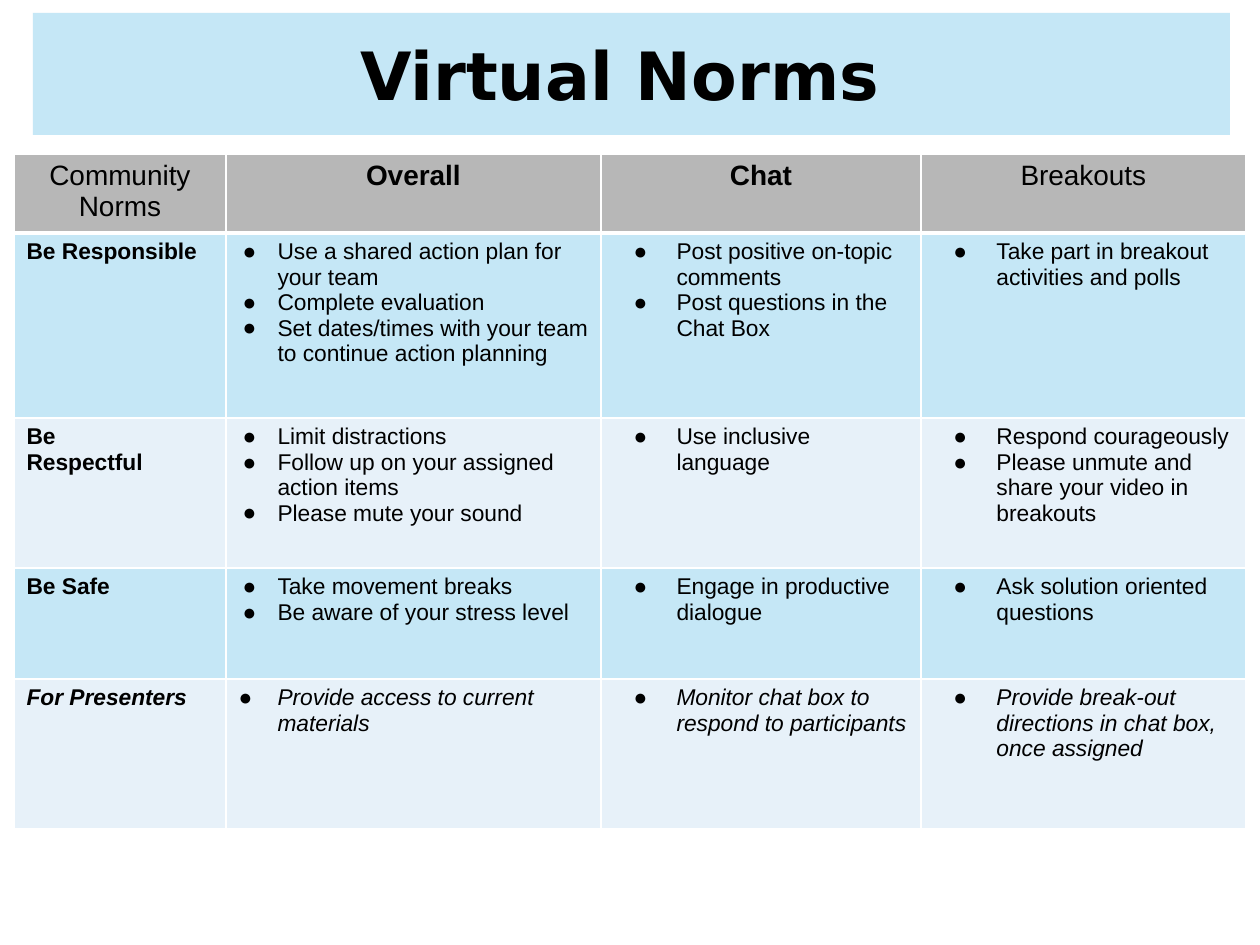
from lxml.etree import SubElement
from pptx import Presentation
from pptx.dml.color import RGBColor
from pptx.enum.text import MSO_ANCHOR, MSO_AUTO_SIZE, PP_ALIGN
from pptx.oxml.ns import qn
from pptx.util import Pt

PX = 914400 / 126
COLORS = {"sky": "A9DCF2", "pale": "E7F1F9", "gray": "B7B7B7",
          "black": "000000", "white": "FFFFFF"}


def paint(shape, name):
    shape.fill.solid()
    shape.fill.fore_color.rgb = RGBColor.from_string(COLORS[name])
    if name == "sky":
        color = shape.fill._xPr.find(qn("a:solidFill"))[0]
        SubElement(color, qn("a:alpha"), val="67000")


def style(font, **form):
    font.color.rgb = RGBColor.from_string(COLORS["black"])
    for key, value in form.items():
        setattr(font, key, value)


deck = Presentation()
deck.slide_width, deck.slide_height = round(1260 * PX), round(945 * PX)
slide = deck.slides.add_slide(deck.slide_layouts[5])

# Title band; the trailing space shifts the centred text
title = slide.shapes.title
box = {"left": 33, "top": 13, "width": 1197, "height": 122}
for key, value in box.items():
    setattr(title, key, round(value * PX))
paint(title, "sky")
frame = title.text_frame
frame.text = "Virtual Norms "
frame.auto_size = MSO_AUTO_SIZE.NONE
frame.vertical_anchor = MSO_ANCHOR.MIDDLE
frame.paragraphs[0].alignment = PP_ALIGN.CENTER
style(frame.paragraphs[0].runs[0].font, name="DejaVu Sans", size=Pt(38), bold=True)

# Norms table: each cell is a list of paragraphs
norms = [
    [["Community Norms"], ["Overall"], ["Chat"], ["Breakouts"]],
    [["Be Responsible"],
     ["Use a shared action plan for your team", "Complete evaluation",
      "Set dates/times with your team to continue action planning"],
     ["Post positive on-topic comments", "Post questions in the Chat Box"],
     ["Take part in breakout activities and polls"]],
    [["Be", "Respectful"],
     ["Limit distractions", "Follow up on your assigned action items",
      "Please mute your sound"],
     ["Use inclusive language"],
     ["Respond courageously", "Please unmute and share your video in breakouts"]],
    [["Be Safe"],
     ["Take movement breaks", "Be aware of your stress level"],
     ["Engage in productive dialogue"],
     ["Ask solution oriented questions"]],
    [["For Presenters"],
     ["Provide access to current materials"],
     ["Monitor chat box to respond to participants"],
     ["Provide break-out directions in chat box, once assigned"]],
]
wide = [212, 375, 320, 325]
high = [79, 185, 150, 111, 150]
fills = ["gray", "sky", "pale", "sky", "pale"]
area = [round(n * PX) for n in (14, 154, sum(wide), sum(high))]
table = slide.shapes.add_table(len(high), len(wide), *area).table
for col, size in zip(table.columns, wide):
    col.width = round(size * PX)
for row, size in zip(table.rows, high):
    row.height = round(size * PX)

for r, line in enumerate(norms):
    for c, items in enumerate(line):
        cell = table.cell(r, c)

        # White borders, thicker under the header
        props = cell._tc.get_or_add_tcPr()
        for side in "LRTB":
            thick = (r, side) in ((0, "B"), (1, "T"))
            edge = SubElement(props, qn(f"a:ln{side}"), w=str(Pt(3 if thick else 1)))
            solid = SubElement(edge, qn("a:solidFill"))
            SubElement(solid, qn("a:srgbClr"), val=COLORS["white"])
        paint(cell, fills[r])

        # Header centred, row names bold, the rest bulleted
        cell.text = "\n".join(items)
        bold = c in (1, 2) if r == 0 else c == 0
        for para in cell.text_frame.paragraphs:
            if r == 0:
                para.alignment = PP_ALIGN.CENTER
            elif c > 0:
                left, hang = (39, 35) if c == 1 else (63, 43)
                if c == 1 and r == 4:
                    hang = left
                form = para._p.get_or_add_pPr()
                form.set("marL", str(round(left * PX)))
                form.set("indent", str(round(-hang * PX)))
                tint = SubElement(form, qn("a:buClr"))
                SubElement(tint, qn("a:srgbClr"), val=COLORS["black"])
                SubElement(form, qn("a:buFont"), typeface="Arial")
                SubElement(form, qn("a:buChar"), char="●")
            style(para.runs[0].font, name="Arial", size=Pt(13 if r else 16),
                  bold=bold, italic=r == 4)

deck.save("out.pptx")
